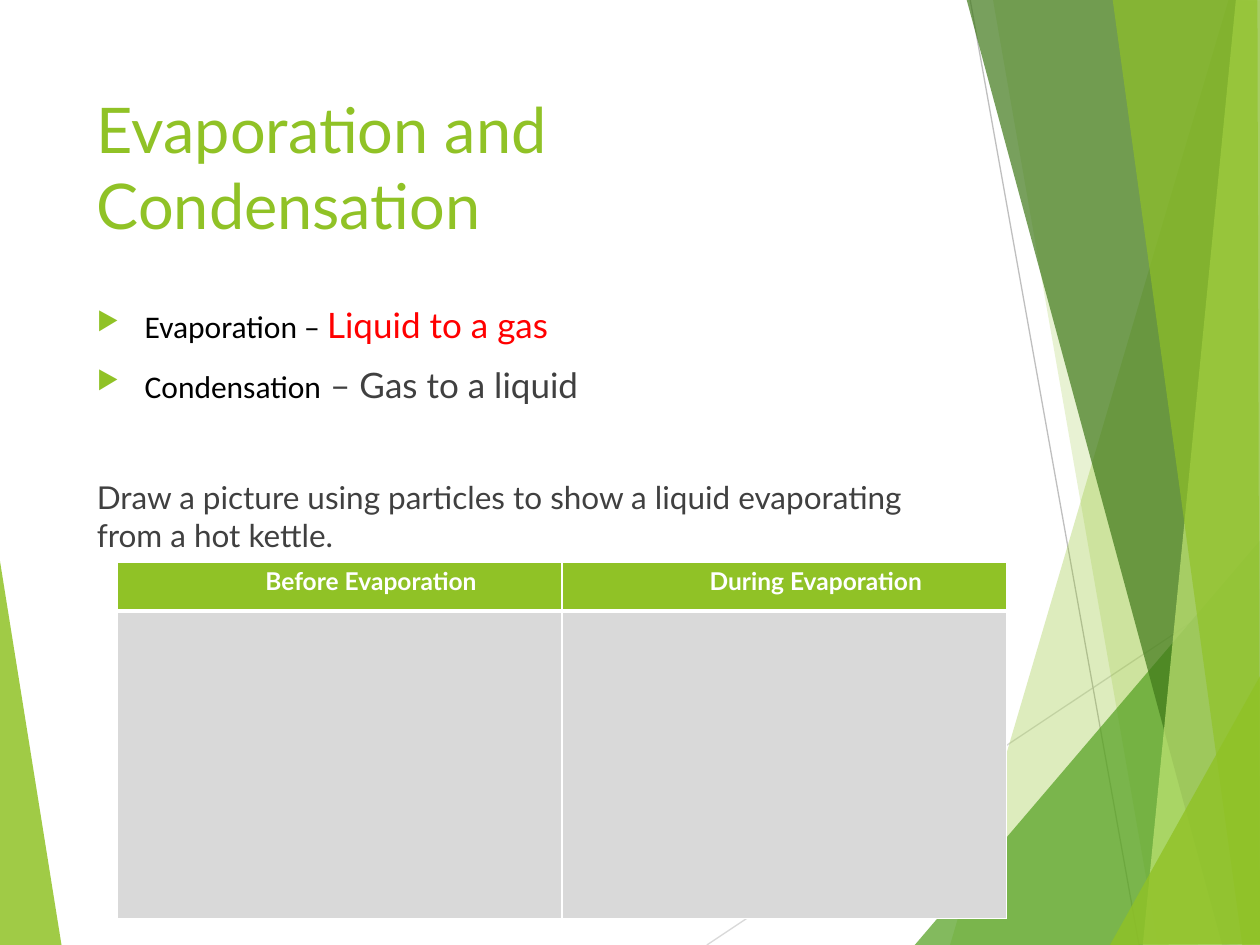
from lxml.etree import SubElement
from pptx import Presentation
from pptx.dml.color import RGBColor
from pptx.enum.shapes import MSO_CONNECTOR
from pptx.enum.text import MSO_ANCHOR, PP_ALIGN
from pptx.oxml.ns import qn
from pptx.util import Inches, Pt

COLORS = {
    "green": "90C226", "leaf": "54A021", "forest": "3F7819", "lime": "C0E474",
    "text": "404040", "answer": "FF0000", "white": "FFFFFF",
    "cell": "D9D9D9", "light_line": "D9D9D9", "dark_line": "BFBFBF",
}

FACETS = [
    ("green", 85, [(-0.01, 4.39), (0.49, 7.51), (-0.01, 7.5)]),
    ("green", 30, [(9.75, 0), (7.54, 7.5), (10.02, 7.51), (10.01, 0.01)]),
    ("green", 20, [(7.88, -0.01), (9.19, 7.5), (10.01, 7.5), (10.01, -0.01)]),
    ("leaf", 72, [(7.26, 7.5), (10, 4.29), (10.01, 7.5)]),
    ("forest", 70, [(7.67, -0.01), (9.7, 7.5), (10.01, 7.49), (10.01, -0.01)]),
    ("lime", 70, [(9.81, -0.01), (9.07, 7.5), (10.01, 7.5), (10, -0.01)]),
    ("green", 65, [(8.83, -0.01), (9.86, 7.5), (10, 7.5), (9.98, -0.01)]),
    ("green", 80, [(8.81, 7.5), (10.01, 5.35), (10.01, 7.49)]),
]

LINES = [
    ("light_line", (5.61, 7.5), (10.01, 4.57)),
    ("dark_line", (7.7, 0), (9.04, 7.5)),
]


def rgb(name):
    return RGBColor.from_string(COLORS[name])


def add_text(paragraph, text, size=20, color="text", bold=False, font="Lato"):
    paragraph.text = paragraph.text or ""
    run = paragraph.add_run()
    run.text = text
    run.font.size = Pt(size)
    run.font.name = font
    run.font.bold = bold
    run.font.color.rgb = rgb(color)


def add_bullet(paragraph):
    properties = paragraph._p.get_or_add_pPr()
    properties.set("marL", str(Inches(0.38)))
    properties.set("indent", str(Inches(-0.38)))
    color = SubElement(properties, qn("a:buClr"))
    SubElement(color, qn("a:srgbClr"), val=COLORS["green"])
    SubElement(properties, qn("a:buSzPct"), val="80000")
    SubElement(properties, qn("a:buChar"), char="▶")


def add_borders(cell, widths):
    properties = cell._tc.get_or_add_tcPr()
    for side, width in zip("LRTB", widths):
        line = SubElement(properties, qn(f"a:ln{side}"), w=str(Pt(width)))
        fill = SubElement(line, qn("a:solidFill"))
        SubElement(fill, qn("a:srgbClr"), val=COLORS["white"])


class SlideBuilder:
    """Draws styled elements on the current slide."""

    def __init__(self, slide):
        self.slide = slide
        self.shapes = slide.shapes

    def facet(self, color, opacity, points):
        corners = [(Inches(x), Inches(y)) for x, y in points]
        builder = self.shapes.build_freeform(*corners[0])
        builder.add_line_segments(corners[1:], close=True)
        shape = builder.convert_to_shape()
        shape.shadow.inherit = False
        shape.fill.solid()
        shape.fill.fore_color.rgb = rgb(color)
        shape.line.fill.background()
        color_element = shape._element.spPr.find(f".//{qn('a:srgbClr')}")
        SubElement(color_element, qn("a:alpha"), val=str(opacity * 1000))

    def line(self, color, start, end):
        connector = self.shapes.add_connector(
            MSO_CONNECTOR.STRAIGHT, *map(Inches, start + end))
        connector.line.color.rgb = rgb(color)
        connector.line.width = Pt(0.75)
        SubElement(connector._element.spPr, qn("a:effectLst"))

    def text_box(self, left, top, width, height):
        shape = self.shapes.add_textbox(*map(Inches, (left, top, width, height)))
        frame = shape.text_frame
        frame.word_wrap = True
        frame.vertical_anchor = MSO_ANCHOR.TOP
        return frame

    def title(self, text):
        frame = self.text_box(0.67, 0.67, 6.94, 1.44)
        first, second = text
        paragraph = frame.paragraphs[0]
        add_text(paragraph, first, size=36, color="green")
        paragraph.add_line_break()
        run_holder = paragraph.add_run()
        run_holder.text = second
        run_holder.font.size = Pt(36)
        run_holder.font.name = "Lato"
        run_holder.font.color.rgb = rgb("green")

    def body(self, definitions, task):
        frame = self.text_box(0.67, 2.36, 6.94, 4.24)
        for index, parts in enumerate(definitions):
            paragraph = frame.add_paragraph() if index else frame.paragraphs[0]
            paragraph.space_before = Pt(10)
            add_bullet(paragraph)
            for text, color in parts:
                add_text(paragraph, text, color=color)
        paragraph = frame.add_paragraph()
        paragraph.space_before = Pt(41.6)
        add_text(paragraph, task, size=18)

    def table(self, headings):
        table = self.shapes.add_table(
            2, len(headings), *map(Inches, (0.93, 4.46, 7.06, 2.83))).table
        for row, height in zip(table.rows, (0.39, 2.44)):
            row.height = Inches(height)
        for column, heading in enumerate(headings):
            header, drawing = table.cell(0, column), table.cell(1, column)
            add_borders(header, (1, 1, 1, 3))
            add_borders(drawing, (1, 1, 3, 1))
            for cell, color in ((header, "green"), (drawing, "cell")):
                cell.fill.solid()
                cell.fill.fore_color.rgb = rgb(color)
            header.margin_left = header.margin_right = Inches(0.07)
            header.margin_top = header.margin_bottom = 0
            paragraph = header.text_frame.paragraphs[0]
            paragraph.alignment = PP_ALIGN.CENTER
            paragraph.line_spacing = 1.15
            paragraph._p.get_or_add_pPr().set("marL", str(Inches(0.5)))
            add_text(paragraph, heading, size=14, color="white", bold=True)


def main():
    presentation = Presentation()
    presentation.slide_width = Inches(10)
    presentation.slide_height = Inches(7.5)
    builder = SlideBuilder(
        presentation.slides.add_slide(presentation.slide_layouts[6]))
    builder.facet(*FACETS[0])
    for line in LINES:
        builder.line(*line)
    for facet in FACETS[1:]:
        builder.facet(*facet)
    builder.title(("Evaporation and", "Condensation"))
    builder.body(
        [
            [("Evaporation – ", "text"), ("Liquid to a gas", "answer")],
            [("Condensation", "answer"), (" – Gas to a liquid", "text")],
        ],
        "Draw a picture using particles to show a liquid evaporating "
        "from a hot kettle.",
    )
    builder.table(("Before Evaporation", "During Evaporation"))
    presentation.save("out.pptx")


if __name__ == "__main__":
    main()
